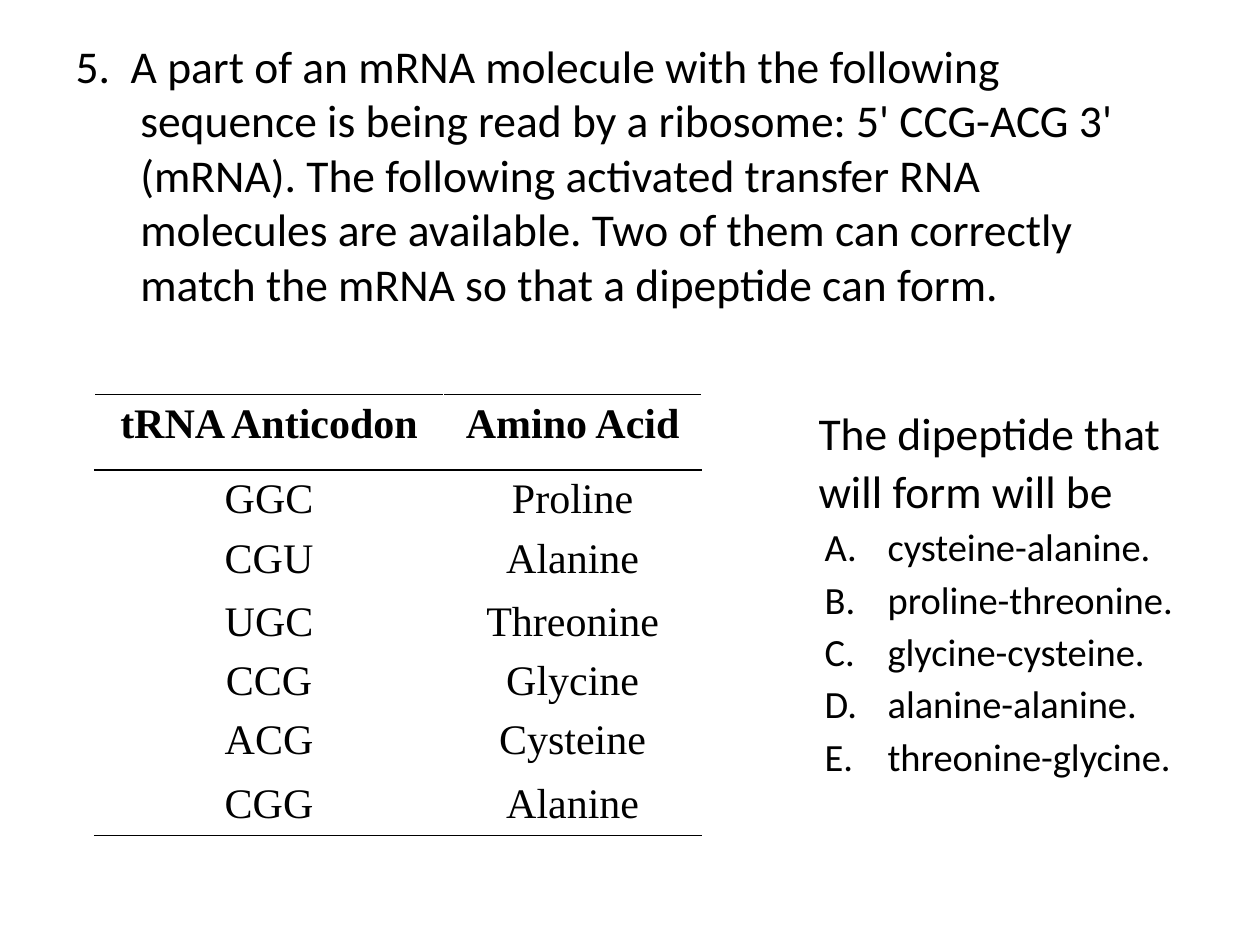
from lxml.etree import SubElement
from pptx import Presentation
from pptx.dml.color import RGBColor
from pptx.enum.text import MSO_ANCHOR, MSO_AUTO_SIZE, PP_ALIGN
from pptx.oxml.ns import qn
from pptx.util import Pt

BLACK = RGBColor(0, 0, 0)
WHITE = RGBColor(255, 255, 255)

QUESTION = (
    "5.  A part of an mRNA molecule with the following sequence is being read "
    "by a ribosome: 5' CCG-ACG 3' (mRNA). The following activated transfer RNA "
    "molecules are available. Two of them can correctly match the mRNA so that "
    "a dipeptide can form."
)
PROMPT = "The dipeptide that will form will be"
CHOICES = ["cysteine-alanine.", "proline-threonine.", "glycine-cysteine.",
           "alanine-alanine.", "threonine-glycine."]
ANTICODONS = [("tRNA Anticodon", "Amino Acid"), ("GGC", "Proline"),
              ("CGU", "Alanine"), ("UGC", "Threonine"), ("CCG", "Glycine"),
              ("ACG", "Cysteine"), ("CGG", "Alanine")]
COLUMN_WIDTHS = [199.5, 147.5]
ROW_HEIGHTS = [43, 34.5, 35.5, 34, 34, 36.5, 34.5]


class QuizPage:
    """Holds the quiz style and the page being filled."""

    body_font = "Calibri"
    table_font = "Times New Roman"

    def __init__(self, page):
        self.page = page

    def style(self, font, name, size, bold=False):
        font.name, font.size, font.bold = name, Pt(size), bold
        font.color.rgb = BLACK

    def body(self, index, left, top, width, height):
        box = self.page.placeholders[index]
        box.left, box.top, box.width, box.height = map(Pt, (left, top, width, height))
        frame = box.text_frame
        frame.word_wrap = True
        frame.auto_size = MSO_AUTO_SIZE.NONE
        frame.vertical_anchor = MSO_ANCHOR.TOP
        return frame

    def paragraph(self, para, text, size, margin, indent, before, spacing=1.0, numbering=None):
        para.text = text
        para.space_before = Pt(before)
        para.line_spacing = spacing
        self.style(para.font, self.body_font, size)
        properties = para._p.get_or_add_pPr()
        properties.set("marL", str(Pt(margin)))
        properties.set("indent", str(Pt(indent)))
        bullet = SubElement(properties, qn("a:buAutoNum" if numbering else "a:buNone"))
        if numbering:
            bullet.set("type", numbering)
        properties.append(properties.find(qn("a:defRPr")))

    def border(self, cell, side, color):
        line = SubElement(cell._tc.get_or_add_tcPr(), qn(f"a:ln{side}"), w=str(Pt(1)))
        fill = SubElement(line, qn("a:solidFill"))
        SubElement(fill, qn("a:srgbClr"), val=str(color))

    def table(self, left, top, rows, widths, heights):
        frame = self.page.shapes.add_table(
            len(rows), len(widths), Pt(left), Pt(top), Pt(sum(widths)), Pt(sum(heights)))
        table = frame.table
        table.first_row = table.horz_banding = False
        for column, width in zip(table.columns, widths):
            column.width = Pt(width)
        for number, (row, height, texts) in enumerate(zip(table.rows, heights, rows)):
            row.height = Pt(height)
            top_color = BLACK if number < 2 else WHITE
            bottom_color = BLACK if number in (0, len(rows) - 1) else WHITE
            for cell, text in zip(row.cells, texts):
                for side, color in zip("LRTB", (WHITE, WHITE, top_color, bottom_color)):
                    self.border(cell, side, color)
                cell.fill.background()
                cell.text = text
                para = cell.text_frame.paragraphs[0]
                para.alignment = PP_ALIGN.CENTER
                self.style(para.font, self.table_font, 24, bold=number == 0)


def main():
    deck = Presentation()
    deck.slide_width, deck.slide_height = Pt(720), Pt(540)
    page = deck.slides.add_slide(deck.slide_layouts[3])
    title = page.shapes.title
    title.element.getparent().remove(title.element)
    quiz = QuizPage(page)

    question = quiz.body(1, 36, 18, 645, 211)
    quiz.paragraph(question.paragraphs[0], QUESTION, 26, 37, -37, 5)

    answers = quiz.body(2, 418.5, 226, 286, 255)
    quiz.paragraph(answers.paragraphs[0], PROMPT, 26, 42, 0, 5, Pt(33))
    for choice in CHOICES:
        para = answers.add_paragraph()
        para.level = 1
        quiz.paragraph(para, choice, 22, 81.5, -36, 7.5, 0.85, "alphaUcPeriod")

    quiz.table(54, 225.5, ANTICODONS, COLUMN_WIDTHS, ROW_HEIGHTS)
    deck.save("out.pptx")


if __name__ == "__main__":
    main()
